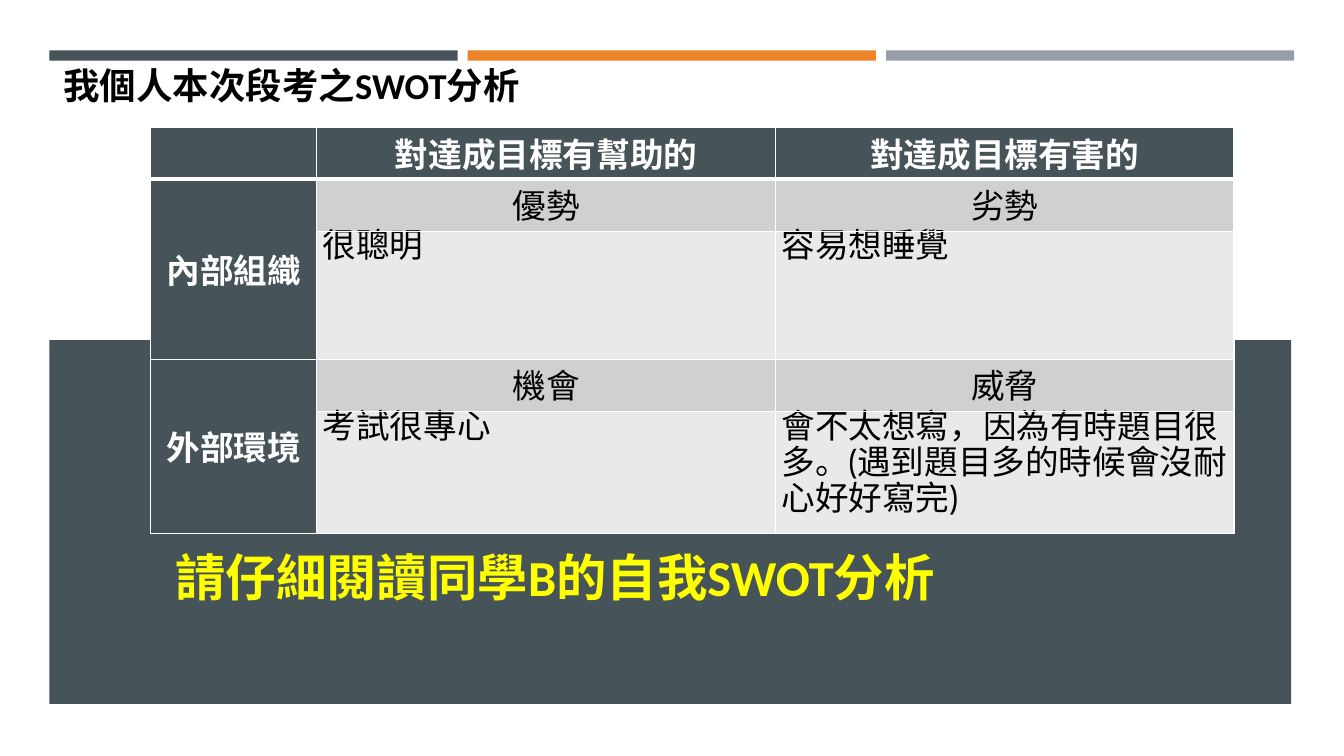
from lxml.etree import SubElement as Sub
from pptx import Presentation
from pptx.dml.color import RGBColor
from pptx.enum.shapes import MSO_SHAPE as Shape
from pptx.enum.text import MSO_ANCHOR as Anchor, MSO_AUTO_SIZE as Auto, PP_ALIGN as Align
from pptx.oxml.ns import qn
from pptx.util import Pt

TITLE = "我個人本次段考之SWOT分析"
NOTE = "請仔細閱讀同學B的自我SWOT分析"
ROWS = [
    ["", "對達成目標有幫助的", "對達成目標有害的"],
    ["內部組織", "優勢", "劣勢"],
    ["", "很聰明", "容易想睡覺"],
    ["外部環境", "機會", "威脅"],
    ["", "考試很專心", "會不太想寫，因為有時題目很多。(遇到題目多的時候會沒耐心好好寫完)"],
]
WIDTHS = [118.8, 327.6, 327.6]
HEIGHTS = [37.3, 37.3, 91.4, 37.3, 87.1]
DARK, MID, PALE = "465359", "CFD1D1", "E9E9EA"
BARS = [DARK, "ED8428", "969FA7"]
BAR_W, BAR_GAP, LEFT = 291.6, 7.2, 35.3


def paint(fill, tone):
    fill.solid()
    fill.fore_color.rgb = RGBColor.from_string(tone)


def write(frame, text, size=24, face="Cabin", tone="000000", bold=False,
          align=Align.LEFT, line=None):
    par = frame.paragraphs[0]
    par.alignment = align
    if line:
        par.line_spacing = Pt(line)
    run = par.add_run()
    run.text = text
    font = run.font
    font.size, font.name, font.bold = Pt(size), face, bold
    font.color.rgb = RGBColor.from_string(tone)


def block(x, y, w, h, tone):
    rect = slide.shapes.add_shape(Shape.RECTANGLE, Pt(x), Pt(y), Pt(w), Pt(h))
    rect.shadow.inherit = False
    rect.line.fill.background()
    paint(rect.fill, tone)


def edge(cell, row):
    props = cell._tc.get_or_add_tcPr()
    thick = {0: "lnB", 1: "lnT"}.get(row)
    for side in ("lnL", "lnR", "lnT", "lnB"):
        line = Sub(props, qn("a:" + side), w=str(Pt(3 if side == thick else 1)))
        Sub(Sub(line, qn("a:solidFill")), qn("a:srgbClr"), val="FFFFFF")


deck = Presentation()
deck.slide_width, deck.slide_height = Pt(960), Pt(540)
slide = deck.slides.add_slide(deck.slide_layouts[5])

for i, tone in enumerate(BARS):
    block(LEFT + i * (BAR_W + BAR_GAP), 36, BAR_W, 7.4, tone)
block(LEFT, 242.9, 887, 260, DARK)

title = slide.shapes.title
title.left, title.top, title.width, title.height = Pt(38.2), Pt(42.5), Pt(880), Pt(36)
title.text_frame.auto_size = Auto.NONE
title.text_frame.vertical_anchor = Anchor.MIDDLE
write(title.text_frame, TITLE, size=26, face="Calibri", bold=True)

grid = slide.shapes.add_table(len(ROWS), len(WIDTHS), Pt(107.5), Pt(90.7),
                              Pt(sum(WIDTHS)), Pt(sum(HEIGHTS))).table
for col, wide in zip(grid.columns, WIDTHS):
    col.width = Pt(wide)
for row, high in zip(grid.rows, HEIGHTS):
    row.height = Pt(high)
for r, texts in enumerate(ROWS):
    for c, text in enumerate(texts):
        cell = grid.cell(r, c)
        head = r == 0 or c == 0
        body = not head and r % 2 == 0
        cell.margin_left = cell.margin_right = Pt(4.3)
        cell.margin_top = cell.margin_bottom = 0
        cell.vertical_anchor = Anchor.MIDDLE if head else Anchor.TOP
        edge(cell, r)
        paint(cell.fill, DARK if head else PALE if body else MID)
        if text:
            write(cell.text_frame, text, bold=head,
                  tone="FFFFFF" if head else "000000",
                  align=Align.LEFT if body else Align.CENTER,
                  line=26 if body else None)
for r in (1, 3):
    grid.cell(r, 0).merge(grid.cell(r + 1, 0))

note = slide.shapes.add_textbox(Pt(118.1), Pt(386.6), Pt(753.8), Pt(51.1))
note.text_frame.word_wrap = True
write(note.text_frame, NOTE, size=36, face="Calibri", tone="FFFF00", bold=True)

deck.save("out.pptx")
